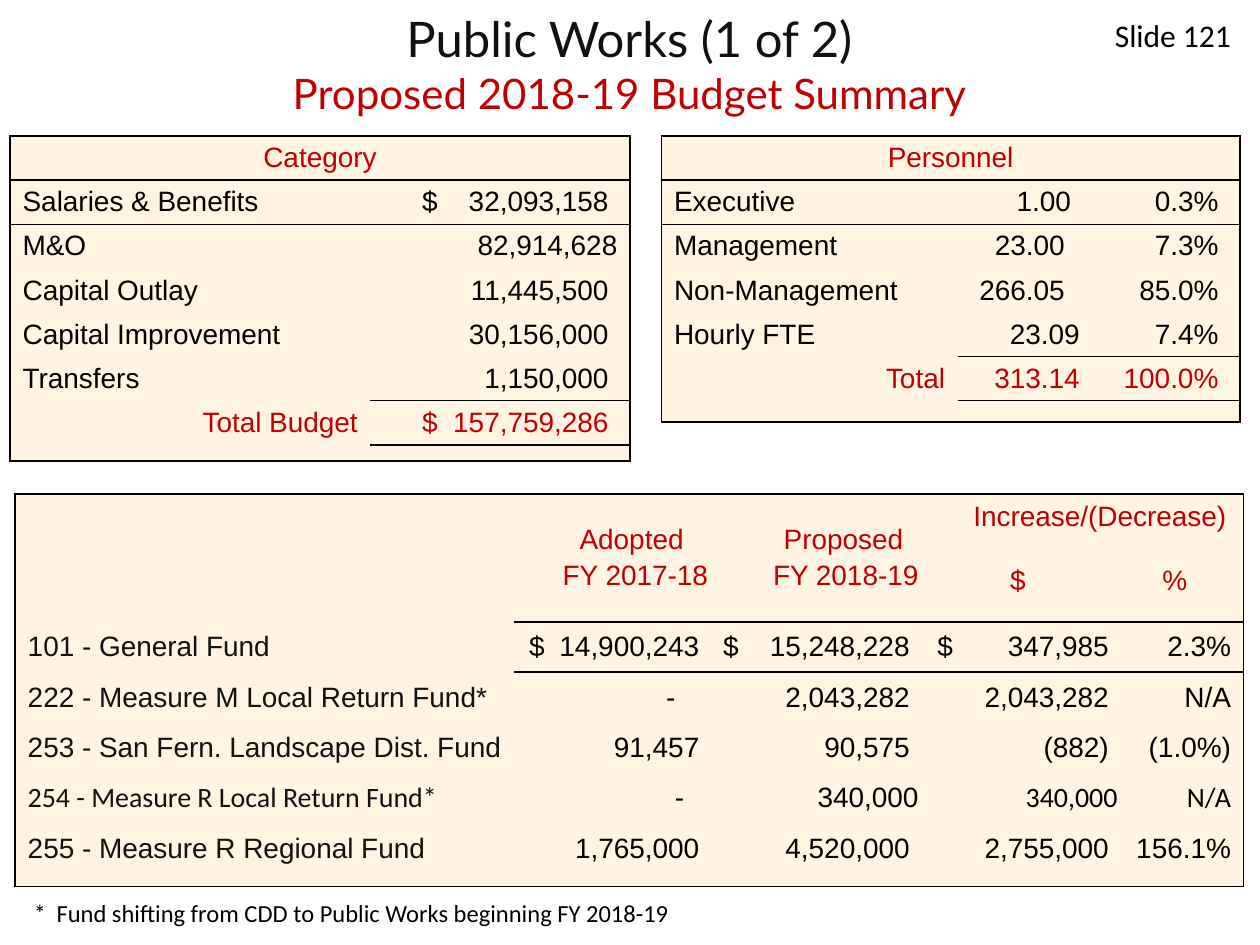
from lxml.etree import SubElement
from pptx import Presentation
from pptx.dml.color import RGBColor
from pptx.enum.text import MSO_ANCHOR, PP_ALIGN
from pptx.oxml.ns import qn
from pptx.util import Inches, Pt

BLACK, DARK, RED, CREAM = "000000", "111111", "C00000", "FFF3E1"
LEFT, CENTER, RIGHT = PP_ALIGN.LEFT, PP_ALIGN.CENTER, PP_ALIGN.RIGHT
NO_STYLE = "{2D5ABB26-0587-4C30-8999-92F81FD0307C}"


def color(value):
    return RGBColor.from_string(value)


def apply(target, values):
    for name, value in values.items():
        setattr(target, name, value)


def add_tab(paragraph, position, align):
    tabs = SubElement(paragraph._p.get_or_add_pPr(), qn("a:tabLst"))
    SubElement(tabs, qn("a:tab"), pos=str(Inches(position)), algn=align)


class BudgetSlide:
    """Holds the style and the current slide, and adds elements to it."""

    style = {"font": "Arial", "size": 16, "color": BLACK, "align": LEFT,
             "left": 0.1, "right": 0.1, "indent": 0}

    def __init__(self, presentation):
        self.slide = presentation.slides.add_slide(presentation.slide_layouts[6])

    def run(self, paragraph, text, look):
        run = paragraph.add_run()
        run.text = text
        apply(run.font, {"name": look["font"], "size": Pt(look["size"])})
        run.font.color.rgb = color(look["color"])

    def text(self, box, lines, anchor=MSO_ANCHOR.TOP, align=LEFT, tab=None):
        shape = self.slide.shapes.add_textbox(*map(Inches, box))
        apply(shape.text_frame, {"word_wrap": True, "vertical_anchor": anchor})
        paragraph = shape.text_frame.paragraphs[0]
        paragraph.alignment = align
        if tab:
            add_tab(paragraph, tab, "l")
        for number, (text, look) in enumerate(lines):
            if number:
                paragraph.add_line_break()
            self.run(paragraph, text, self.style | look)

    def border(self, cell, sides):
        properties = cell._tc.get_or_add_tcPr()
        for side in "LRTB":
            if side in sides:
                line = SubElement(properties, qn("a:ln" + side), w=str(Pt(1)))
                fill = SubElement(line, qn("a:solidFill"))
                SubElement(fill, qn("a:srgbClr"), val=BLACK)

    def fill_cell(self, cell, text, look, width):
        if not text:
            apply(cell, {"margin_top": 0, "margin_bottom": 0})
            cell.text_frame.paragraphs[0]._p.get_or_add_endParaRPr().set("sz", "400")
            return
        tabbed = "\t" in text
        apply(cell, {"margin_left": Inches(look["left"]),
                     "margin_right": Inches(0 if tabbed else look["right"]),
                     "margin_top": Inches(0.04), "margin_bottom": Inches(0.04),
                     "vertical_anchor": MSO_ANCHOR.MIDDLE})
        for number, line in enumerate(text.split("\n")):
            frame = cell.text_frame
            paragraph = frame.add_paragraph() if number else frame.paragraphs[0]
            paragraph.alignment = LEFT if tabbed else look["align"]
            if number:
                apply(paragraph, {"alignment": RIGHT, "space_before": Pt(3)})
            elif look["indent"]:
                paragraph._p.get_or_add_pPr().set("marL", str(Inches(look["indent"])))
            if tabbed:
                add_tab(paragraph, width - look["left"] - look["right"], "r")
            self.run(paragraph, line, look)

    def table(self, place, widths, heights, rows, columns, looks, merges, rules):
        """Rules are (row, first column) pairs with a line below."""
        size = sum(widths), sum(heights)
        shape = self.slide.shapes.add_table(
            len(heights), len(widths), *map(Inches, (*place, *size)))
        table = shape.table
        apply(table, {"first_row": False, "horz_banding": False})
        table._tbl.tblPr.find(qn("a:tableStyleId")).text = NO_STYLE
        for column, width in zip(table.columns, widths):
            column.width = Inches(width)
        for row, height in zip(table.rows, heights):
            row.height = Inches(height)
        for first, last in merges:
            table.cell(*first).merge(table.cell(*last))
        ruled = {(r, c) for r, start in rules for c in range(start, len(widths))}
        ruled |= {(len(heights) - 1, c) for c in range(len(widths))}
        for r in range(len(heights)):
            for c, width in enumerate(widths):
                cell = table.cell(r, c)
                bottom = r + (cell.span_height if cell.is_merge_origin else 1) - 1
                end = c + (cell.span_width if cell.is_merge_origin else 1)
                tests = {"L": c == 0, "R": end == len(widths),
                         "T": r == 0 or (r - 1, c) in ruled, "B": (bottom, c) in ruled}
                self.border(cell, [side for side, shown in tests.items() if shown])
                cell.fill.solid()
                cell.fill.fore_color.rgb = color(CREAM)
                look = self.style | columns[c] | looks.get((r, c), {})
                text = rows[r][c] if r < len(rows) and c < len(rows[r]) else ""
                self.fill_cell(cell, text, look, width)


def main():
    presentation = Presentation()
    apply(presentation, {"slide_width": Inches(10), "slide_height": Inches(7.5)})
    page = BudgetSlide(presentation)
    page.text((0.33, 0.17, 9.33, 0.67),
              [("Public Works (1 of 2)", {"font": "Lato", "size": 28, "color": DARK}),
               ("Proposed 2018-19 Budget Summary", {"font": "Lato", "size": 24, "color": RED})],
              MSO_ANCHOR.MIDDLE, CENTER)

    heading = {"align": CENTER, "color": RED}
    total = {"align": RIGHT, "color": RED}
    number = {"align": RIGHT, "right": 0.17}
    page.table(
        (0.08, 1.08), (2.86, 2.06), [0.35] * 7 + [0.13],
        [("Category",),
         ("Salaries & Benefits", "$\t32,093,158"),
         ("M&O", "82,914,628"),
         ("Capital Outlay", "11,445,500"),
         ("Capital Improvement", "30,156,000"),
         ("Transfers", "1,150,000"),
         ("Total Budget", "$\t157,759,286")],
        ({}, number),
        {(0, 0): heading, (1, 1): {"left": 0.41}, (2, 1): {"right": 0.1},
         (6, 0): total, (6, 1): {"left": 0.41, "color": RED}},
        [((0, 0), (0, 1))], [(0, 0), (5, 1), (6, 1)])

    page.table(
        (5.25, 1.08), (2.35, 1.07, 1.17), [0.35] * 6 + [0.17],
        [("Personnel",),
         ("Executive", "1.00", "0.3%"),
         ("Management", "23.00", "7.3%"),
         ("Non-Management", "266.05", "85.0%"),
         ("Hourly FTE", "23.09", "7.4%"),
         ("Total", "313.14", "100.0%")],
        ({}, {"align": RIGHT}, number),
        {(0, 0): heading, (1, 1): {"right": 0.17}, (2, 1): {"right": 0.22},
         (3, 1): {"right": 0.22}, (5, 0): total, (5, 1): total, (5, 2): {"color": RED}},
        [((0, 0), (0, 2))], [(0, 0), (4, 1), (5, 1)])

    amount = {"align": RIGHT, "left": 0.12, "right": 0.07}
    year = {"align": LEFT, "color": RED, "left": 0.1, "right": 0}
    calibri = {"font": "Calibri"}
    page.table(
        (0.12, 3.92), (3.96, 1.54, 1.67, 1.58, 1), [0.36, 0.63] + [0.4] * 5 + [0.1],
        [("", "Adopted\nFY 2017-18", "Proposed\nFY 2018-19", "Increase/(Decrease)"),
         ("", "", "", "$", "%"),
         ("101 - General Fund", "$\t14,900,243", "$\t15,248,228", "$\t347,985", "2.3%"),
         ("222 - Measure M Local Return Fund*", "-", "2,043,282", "2,043,282", "N/A"),
         ("253 - San Fern. Landscape Dist. Fund", "91,457", "90,575", "(882)", "(1.0%)"),
         ("254 - Measure R Local Return Fund*", "-", "340,000", "340,000", "N/A"),
         ("255 - Measure R Regional Fund", "1,765,000", "4,520,000", "2,755,000", "156.1%")],
        ({"color": DARK, "right": 0.01}, amount, amount, amount | {"left": 0.15},
         {"align": RIGHT, "left": 0.01}),
        {(0, 1): year | {"indent": 0.42}, (0, 2): year | {"indent": 0.5},
         (0, 3): heading | {"left": 0.35, "right": 0.05},
         (1, 3): heading | {"left": 0.1, "right": 0.1}, (1, 4): heading,
         (3, 1): {"right": 0.26}, (5, 0): calibri, (5, 1): {"right": 0.19},
         (5, 2): {"right": 0}, (5, 3): calibri | {"right": 0}, (5, 4): calibri},
        [((0, 1), (1, 1)), ((0, 2), (1, 2)), ((0, 3), (0, 4))], [(1, 1)])

    page.text((0.17, 7.08, 7.75, 0.34),
              [("*\tFund shifting from CDD to Public Works beginning FY 2018-19",
                calibri | {"size": 14})], tab=0.18)
    page.text((8.75, 0.08, 2.33, 0.5), [("Slide 121", calibri | {"size": 18})])
    presentation.save("out.pptx")


if __name__ == "__main__":
    main()
